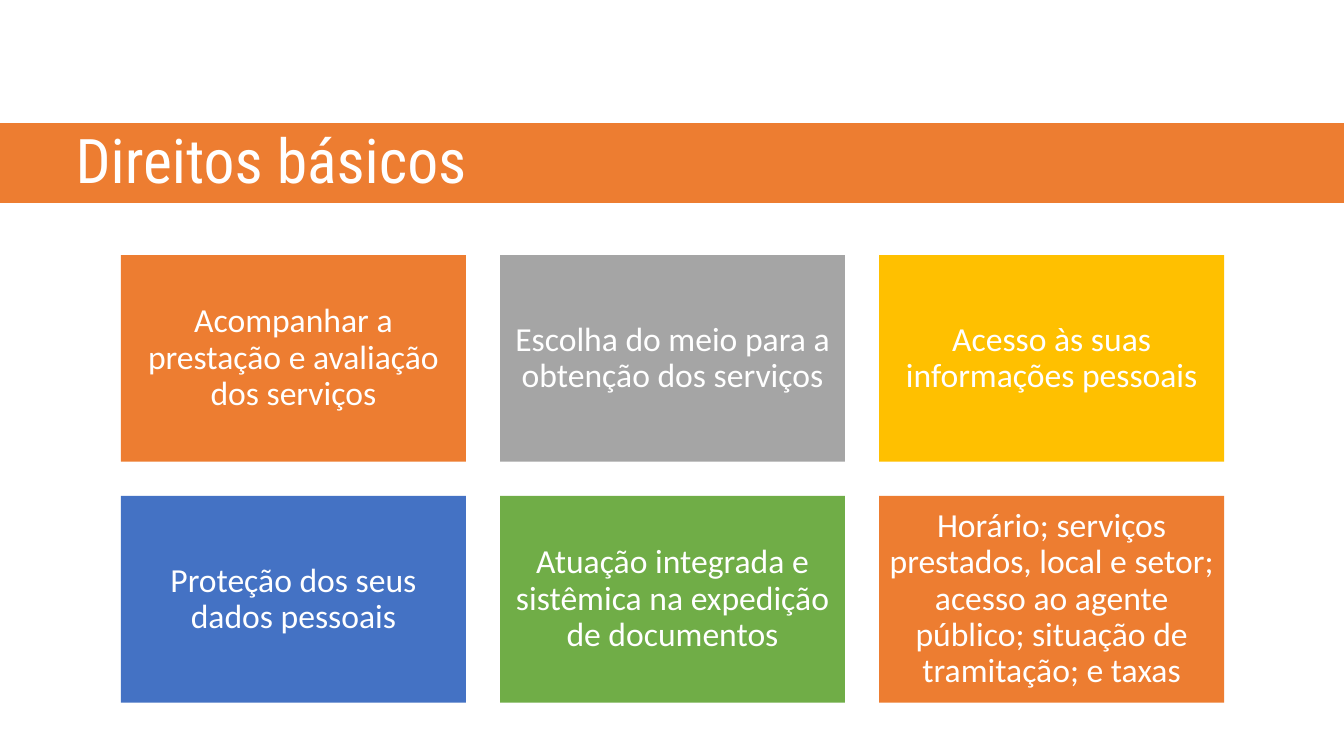
from pptx import Presentation
from pptx import util as u
from pptx.dml.color import RGBColor
from pptx.enum import shapes, text

WHITE, ORANGE = "FFFFFF", "ED7D31"
COLUMNS = 3
RIGHTS = [
    ("Acompanhar a prestação e avaliação dos serviços", ORANGE),
    ("Escolha do meio para a obtenção dos serviços", "A5A5A5"),
    ("Acesso às suas informações pessoais", "FFC000"),
    ("Proteção dos seus dados pessoais", "4472C4"),
    ("Atuação integrada e sistêmica na expedição de documentos", "70AD47"),
    ("Horário; serviços prestados, local e setor; acesso ao agente público; "
     "situação de tramitação; e taxas", ORANGE),
]


def color(value):
    return RGBColor.from_string(value)


def apply(target, values):
    for name, value in values.items():
        setattr(target, name, value)


class RightsSlide:
    """Holds the slide, its type styles and the grid of cards."""

    title_font = {"name": "Roboto Condensed", "size": u.Pt(44), "bold": False}
    card_font = {"name": "Calibri", "size": u.Pt(24)}
    left, top = 1.2, 2.53
    width, height = 3.42, 2.05
    gap = 0.34

    def __init__(self, deck):
        self.page = deck.slides.add_slide(deck.slide_layouts[5])

    def rectangle(self, left, top, width, height, fill):
        box = self.page.shapes.add_shape(
            shapes.MSO_SHAPE.RECTANGLE,
            *map(u.Inches, (left, top, width, height)))
        box.shadow.inherit = False
        box.fill.solid()
        box.fill.fore_color.rgb = color(fill)
        box.line.fill.background()
        return box

    def set_text(self, box, words, font, align, inset):
        frame = box.text_frame
        frame.text = words
        margins = {f"margin_{side}": u.Inches(inset)
                   for side in ("left", "right", "top", "bottom")}
        apply(frame, {"word_wrap": True,
                      "auto_size": text.MSO_AUTO_SIZE.NONE,
                      "vertical_anchor": text.MSO_ANCHOR.MIDDLE, **margins})
        para = frame.paragraphs[0]
        apply(para, {"alignment": align, "line_spacing": 0.9})
        span = para.runs[0]
        apply(span.font, font)
        span.font.color.rgb = color(WHITE)

    def card(self, index, words, fill):
        row, column = divmod(index, COLUMNS)
        box = self.rectangle(self.left + column * (self.width + self.gap),
                             self.top + row * (self.height + self.gap),
                             self.width, self.height, fill)
        self.set_text(box, words, self.card_font, text.PP_ALIGN.CENTER, 0.1)

    def band(self):
        band = self.rectangle(-0.3, 1.21, 13.88, 0.81, ORANGE)
        band.line.color.rgb = color(WHITE)
        band.line.width = u.Pt(1)

    def title(self, words):
        """Fill the title placeholder and bring it in front of the band."""
        title = self.page.shapes.title
        apply(title, {"left": u.Inches(0.65), "top": u.Inches(0.9),
                      "width": u.Inches(11.5), "height": u.Inches(1.45)})
        self.set_text(title, words, self.title_font, text.PP_ALIGN.LEFT, 0.1)
        self.page.shapes._spTree.append(title._element)


def main():
    deck = Presentation()
    apply(deck, {"slide_width": u.Inches(13.33), "slide_height": u.Inches(7.5)})
    slide = RightsSlide(deck)
    for index, (words, fill) in enumerate(RIGHTS):
        slide.card(index, words, fill)
    slide.band()
    slide.title("Direitos básicos")
    deck.save("out.pptx")


if __name__ == "__main__":
    main()
